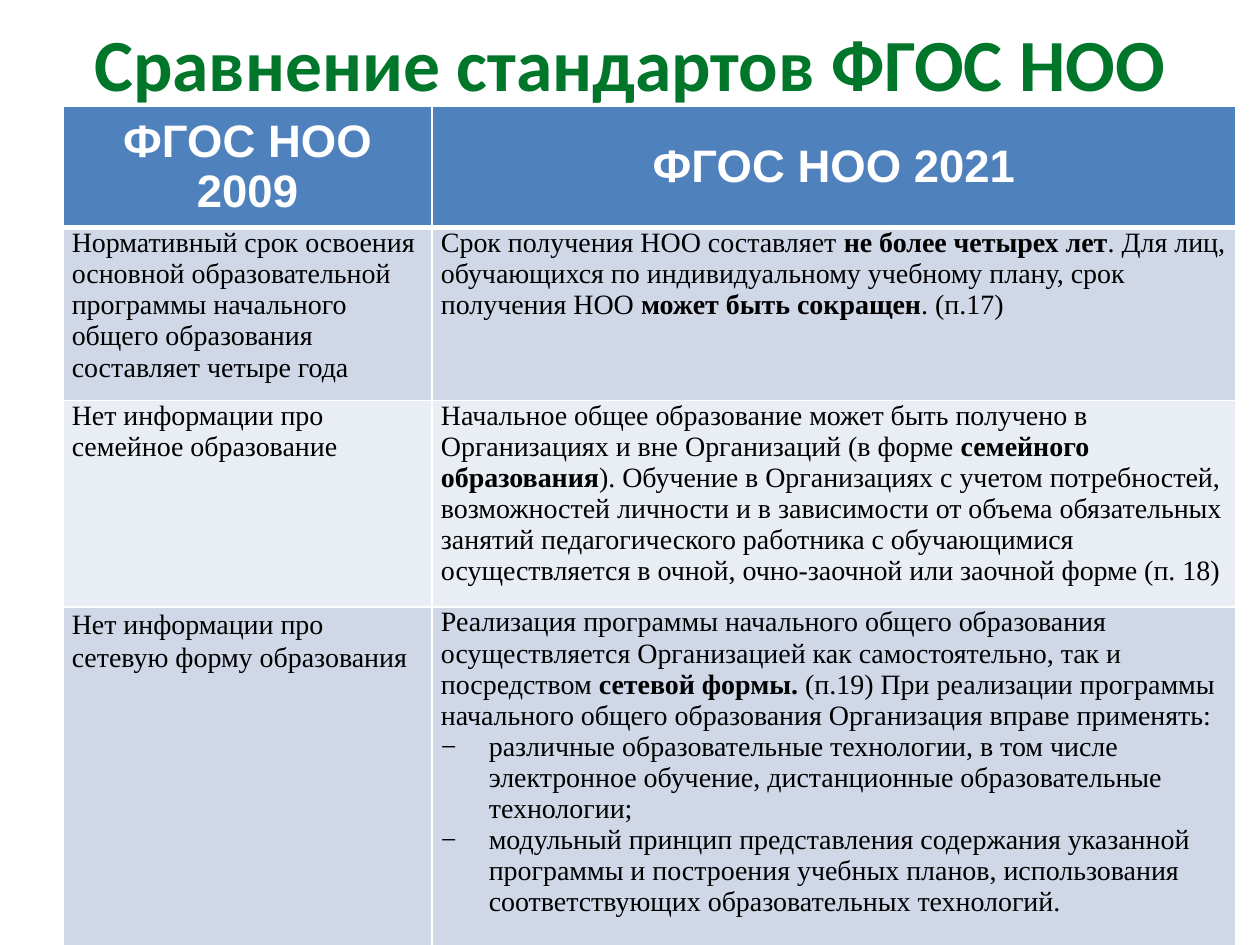
import pptx
import pptx.util
import pptx.dml.color
import pptx.enum.text
import pptx.oxml
import pptx.oxml.ns

ALIGN = pptx.enum.text.PP_ALIGN
MIDDLE = pptx.enum.text.MSO_ANCHOR.MIDDLE
TOP = pptx.enum.text.MSO_ANCHOR.TOP

HEADS = ["ФГОС НОО 2009", "ФГОС НОО 2021"]
ROWS = [
    (
        ["Нормативный срок освоения основной образовательной программы начального общего образования составляет четыре года"],
        ["Срок получения НОО составляет *не более четырех лет*. Для лиц, обучающихся по индивидуальному учебному плану, срок получения НОО *может быть сокращен*. (п.17)"],
    ),
    (
        ["Нет информации про семейное образование"],
        ["Начальное общее образование может быть получено в Организациях и вне Организаций (в форме *семейного образования*). Обучение в Организациях с учетом потребностей, возможностей личности и в зависимости от объема обязательных занятий педагогического работника с обучающимися осуществляется в очной, очно-заочной или заочной форме (п. 18)"],
    ),
    (
        ["Нет информации про сетевую форму образования"],
        [
            "Реализация программы начального общего образования осуществляется Организацией как самостоятельно, так и посредством *сетевой формы. *(п.19) При реализации программы начального общего образования Организация вправе применять:",
            "−различные образовательные технологии, в том числе электронное обучение, дистанционные образовательные технологии;",
            "−модульный принцип представления содержания указанной программы и построения учебных планов, использования соответствующих образовательных технологий.",
        ],
    ),
]


def color(text):
    return pptx.dml.color.RGBColor.from_string(text)


def node(tag, attrs="", inner=""):
    space = pptx.oxml.ns.nsdecls("a")
    return pptx.oxml.parse_xml(f"<a:{tag} {space} {attrs}>{inner}</a:{tag}>")


class Sheet:
    green, white, black = "00762A", "FFFFFF", "000000"
    head, bands = "4F81BD", ["D0D8E8", "E9EDF4"]

    def __init__(self, deck):
        self.deck = deck
        self.slide = deck.slides.add_slide(deck.slide_layouts[6])

    def wide(self, share):
        return round(self.deck.slide_width * share / 100)

    def high(self, share):
        return round(self.deck.slide_height * share / 100)

    def box(self, left, top, width, height):
        return self.wide(left), self.high(top), self.wide(width), self.high(height)

    def style(self, run, font, size, tone, bold):
        run.font.name = font
        run.font.size = pptx.util.Pt(size)
        run.font.bold = bold
        run.font.color.rgb = color(tone)

    def line(self, para, text, font, size, tone):
        para.alignment = ALIGN.CENTER
        para.text = text
        self.style(para.runs[0], font, size, tone, True)

    def title(self, text, *place):
        frame = self.slide.shapes.add_textbox(*self.box(*place)).text_frame
        frame.word_wrap = True
        frame.vertical_anchor = MIDDLE
        self.line(frame.paragraphs[0], text, "Calibri", 42, self.green)

    def bullet(self, para):
        props = para._p.get_or_add_pPr()
        dent = pptx.util.Inches(0.38)
        props.set("marL", str(dent))
        props.set("indent", str(-dent))
        props.append(node("buFont", 'typeface="Times New Roman"'))
        props.append(node("buChar", 'char="−"'))

    def body(self, frame, lines):
        for spot, text in enumerate(lines):
            para = frame.add_paragraph() if spot else frame.paragraphs[0]
            para.alignment = ALIGN.LEFT
            if text.startswith("−"):
                self.bullet(para)
            for turn, part in enumerate(text.lstrip("−").split("*")):
                run = para.add_run()
                run.text = part
                self.style(run, "Times New Roman", 16, self.black, turn % 2 == 1)

    def paint(self, cell, fill, base=1):
        props = cell._tc.get_or_add_tcPr()
        ink = f'<a:solidFill><a:srgbClr val="{self.white}"/></a:solidFill>'
        for side, width in zip("LRTB", [1, 1, 1, base]):
            props.append(node("ln" + side, f'w="{pptx.util.Pt(width)}"', ink))
        cell.fill.solid()
        cell.fill.fore_color.rgb = color(fill)

    def table(self, left, top, cols, rows):
        place = self.box(left, top, sum(cols), sum(rows))
        grid = self.slide.shapes.add_table(len(rows), len(cols), *place).table
        for col, share in zip(grid.columns, cols):
            col.width = self.wide(share)
        for row, share in zip(grid.rows, rows):
            row.height = self.high(share)
        for cell, text in zip(grid.rows[0].cells, HEADS):
            self.paint(cell, self.head, 3)
            cell.vertical_anchor = MIDDLE
            self.line(cell.text_frame.paragraphs[0], text, "Arial", 26, self.white)
        for spot, texts in enumerate(ROWS):
            for cell, lines in zip(grid.rows[spot + 1].cells, texts):
                self.paint(cell, self.bands[spot % 2])
                cell.vertical_anchor = TOP
                cell.margin_left = cell.margin_right = pptx.util.Inches(0.07)
                cell.margin_top = cell.margin_bottom = 0
                self.body(cell.text_frame, lines)
        grid.cell(3, 0).text_frame.paragraphs[0].line_spacing = 1.07


def main():
    deck = pptx.Presentation()
    deck.slide_width = pptx.util.Inches(10)
    deck.slide_height = pptx.util.Inches(7.5)
    sheet = Sheet(deck)
    sheet.title("Сравнение стандартов ФГОС НОО", 5, 4, 90, 5.07)
    sheet.table(5, 11.2, [29.3, 63.8], [7.33, 18.27, 21.87, 36.53])
    deck.save("out.pptx")


if __name__ == "__main__":
    main()
